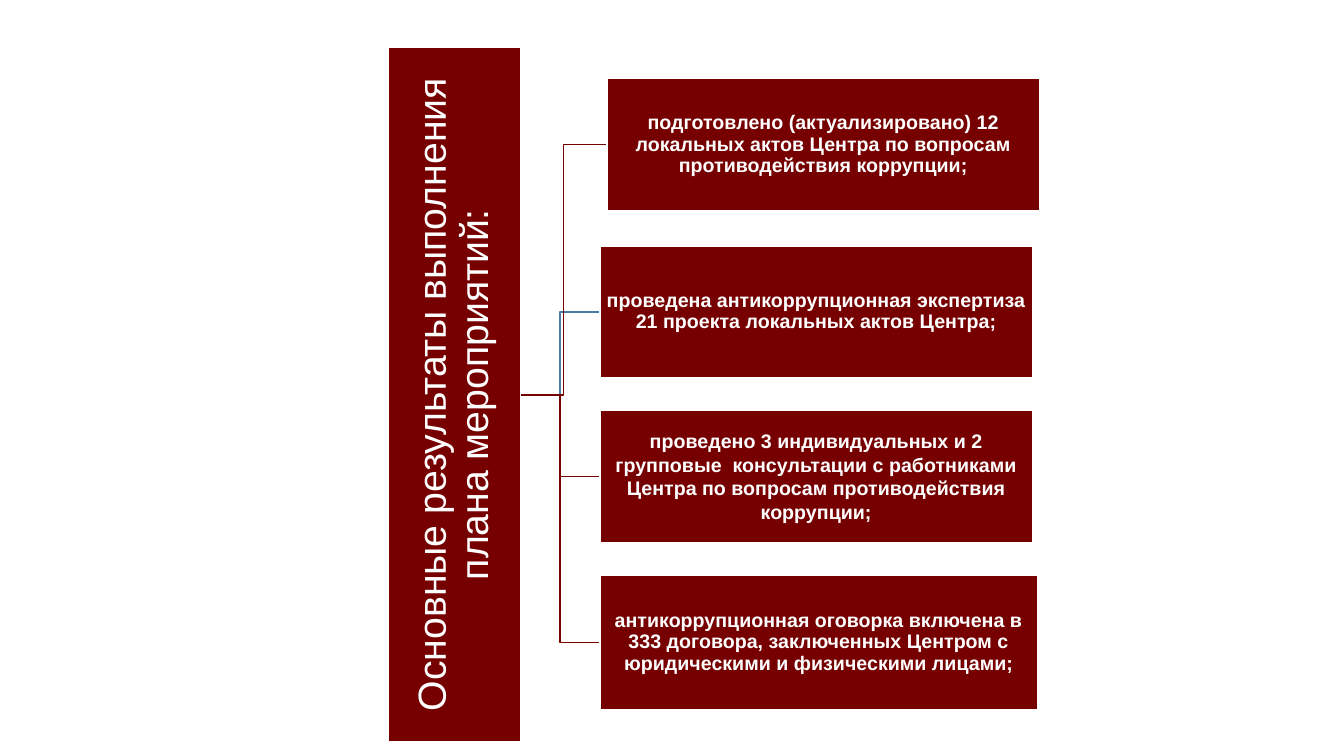
from pptx import Presentation
from pptx.dml.color import RGBColor
from pptx.enum.shapes import MSO_SHAPE
from pptx.enum.text import MSO_ANCHOR, PP_ALIGN
from pptx.util import Inches, Pt

RECTANGLE = MSO_SHAPE.RECTANGLE
MIDDLE = MSO_ANCHOR.MIDDLE
CENTER = PP_ALIGN.CENTER

MAROON = RGBColor(0x76, 0x00, 0x00)
BLUE = RGBColor(0x49, 0x7C, 0xAB)
WHITE = RGBColor(0xFF, 0xFF, 0xFF)

TITLE = "Основные результаты выполнения плана мероприятий:"
TRUNK_X, TRUNK_Y = 5.16, 3.92

# text, left, top, width, height, line spacing, connector colour
RESULTS = [
    ("антикоррупционная оговорка включена в 333 договора, заключенных "
     "Центром с юридическими и физическими лицами;",
     5.95, 5.71, 4.34, 1.33, 0.9, MAROON),
    ("проведено 3 индивидуальных и 2 групповые  консультации с работниками "
     "Центра по вопросам противодействия коррупции;",
     5.95, 4.07, 4.29, 1.31, 1.0, MAROON),
    ("проведена антикоррупционная экспертиза 21 проекта локальных актов "
     "Центра;",
     5.95, 2.44, 4.29, 1.31, 0.9, BLUE),
    ("подготовлено (актуализировано) 12 локальных актов Центра по вопросам "
     "противодействия коррупции;",
     6.02, 0.78, 4.29, 1.31, 0.9, MAROON),
]


class HierarchySlide:
    font_name = "Arial"
    line_width = Pt(1)

    def __init__(self, slide):
        self.slide = slide

    def branch(self, end_x, end_y, color):
        """Draw an elbow line from the title box to a result box."""
        middle_x = (TRUNK_X + end_x) / 2
        points = [(middle_x, TRUNK_Y), (middle_x, end_y), (end_x, end_y)]
        builder = self.slide.shapes.build_freeform(
            Inches(TRUNK_X), Inches(TRUNK_Y))
        builder.add_line_segments(
            [(Inches(x), Inches(y)) for x, y in points], close=False)
        shape = builder.convert_to_shape()
        shape.shadow.inherit = False
        shape.fill.background()
        shape.line.color.rgb = color
        shape.line.width = self.line_width

    def box(self, text, left, top, width, height, size, spacing, margin,
            bold=False, rotation=0):
        shape = self.slide.shapes.add_shape(
            RECTANGLE, Inches(left), Inches(top), Inches(width), Inches(height))
        shape.rotation = rotation
        shape.shadow.inherit = False
        shape.fill.solid()
        shape.fill.fore_color.rgb = MAROON
        shape.line.color.rgb = WHITE
        shape.line.width = self.line_width

        frame = shape.text_frame
        frame.word_wrap = True
        frame.vertical_anchor = MIDDLE
        frame.margin_left = frame.margin_right = Inches(margin)
        frame.margin_top = frame.margin_bottom = Inches(margin)
        frame.text = text
        paragraph = frame.paragraphs[0]
        paragraph.alignment = CENTER
        paragraph.line_spacing = spacing
        font = paragraph.runs[0].font
        font.name = self.font_name
        font.size = Pt(size)
        font.bold = bold
        font.color.rgb = WHITE


def main():
    presentation = Presentation()
    presentation.slide_width = Inches(13.33)
    presentation.slide_height = Inches(7.5)
    blank_layout = presentation.slide_layouts[6]
    hierarchy = HierarchySlide(presentation.slides.add_slide(blank_layout))

    for _, left, top, _, height, _, color in RESULTS:
        hierarchy.branch(left, top + height / 2, color)

    hierarchy.box(TITLE, 1.06, 3.26, 6.89, 1.31, size=28, spacing=0.9,
                  margin=0.02, rotation=270)
    for text, left, top, width, height, spacing, _ in reversed(RESULTS):
        hierarchy.box(text, left, top, width, height, size=14,
                      spacing=spacing, margin=0.01, bold=True)

    presentation.save("out.pptx")


if __name__ == "__main__":
    main()
